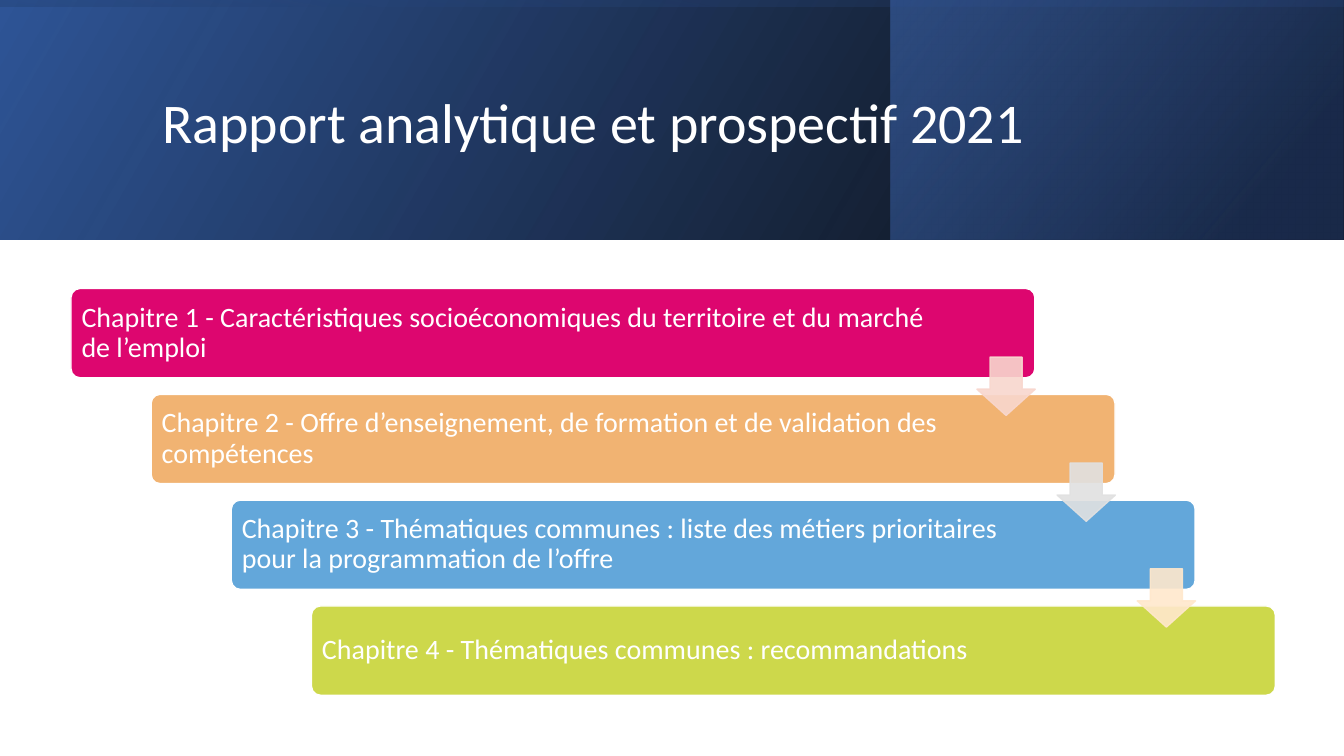
from lxml import etree
from pptx import Presentation, util as u
from pptx.dml.color import RGBColor
from pptx.enum import shapes, text
from pptx.oxml import ns

FONT = "Calibri"
COLOURS = {
    "white": "FFFFFF", "black": "000000", "navy": "203864",
    "blue": "2F5597", "bright": "4472C4",
    "pink": "DD066F", "orange": "F1B372", "sky": "63A7DA", "lime": "CDD84B",
    "pale pink": "F8D7CE", "pale grey": "E1E1E1", "pale orange": "FFE8CC",
}
# Wording, colour and right text margin (cm)
CHAPTERS = [
    ("Chapitre 1 - Caractéristiques socioéconomiques du territoire et du marché de l’emploi",
     "pink", 2.68),
    ("Chapitre 2 - Offre d’enseignement, de formation et de validation des compétences",
     "orange", 3.7),
    ("Chapitre 3 - Thématiques communes : liste des métiers prioritaires "
     "pour la programmation de l’offre", "sky", 3.7),
    ("Chapitre 4 - Thématiques communes : recommandations", "lime", 3.7),
]
ARROW_COLOURS = ["pale pink", "pale grey", "pale orange"]


def colour(name):
    return RGBColor.from_string(COLOURS[name])


def add_alpha(colour_element, percent):
    etree.SubElement(colour_element, ns.qn("a:alpha"), val=str(percent * 1000))


def add_block(page, kind, left, top, width, height):
    block = page.shapes.add_shape(kind, u.Cm(left), u.Cm(top), u.Cm(width), u.Cm(height))
    block.shadow.inherit = False
    return block


def paint(block, fill, line):
    block.fill.solid()
    block.fill.fore_color.rgb = colour(fill)
    block.line.color.rgb = colour(line)
    block.line.width = u.Pt(1)


def format_text(frame, size):
    frame.word_wrap = True
    frame.vertical_anchor = text.MSO_ANCHOR.MIDDLE
    para = frame.paragraphs[0]
    para.alignment = text.PP_ALIGN.LEFT
    para.line_spacing = 0.9
    font = para.runs[0].font
    font.name, font.size = FONT, u.Pt(size)
    font.color.rgb = colour("white")


def add_gradient(page, box, angle, stops, rotation=0):
    """Mirrored rectangle whose stops are (position, colour, opacity)."""
    block = add_block(page, shapes.MSO_SHAPE.RECTANGLE, *box)
    block.rotation = rotation
    block.line.fill.background()
    block.fill.background()
    properties = block._element.spPr
    properties.find(ns.qn("a:xfrm")).set("flipH", "1")
    gradient = etree.Element(ns.qn("a:gradFill"), rotWithShape="1")
    stop_list = etree.SubElement(gradient, ns.qn("a:gsLst"))
    for position, name, opacity in stops:
        stop = etree.SubElement(stop_list, ns.qn("a:gs"), pos=str(position * 1000))
        add_alpha(etree.SubElement(stop, ns.qn("a:srgbClr"), val=COLOURS[name]), opacity)
    etree.SubElement(gradient, ns.qn("a:lin"), ang=str(angle * 60000), scaled="0")
    properties.replace(properties.find(ns.qn("a:noFill")), gradient)


def draw_header(page, left, top, width, height):
    # Layered gradients
    add_gradient(page, (left, top, width, height), 330,
                 [(0, "black", 96), (100, "blue", 100)])
    panel_left = 22.44
    add_gradient(page, (left + panel_left, top, width - panel_left - 0.02, height), 320,
                 [(19, "navy", 68), (100, "bright", 48)])
    shift = (width - height) / 2
    add_gradient(page, (left + shift, top - shift, height, width), 350,
                 [(23, "blue", 16), (99, "black", 45)], rotation=270)

    # Title, brought in front of the gradients
    title = page.shapes.title
    title.left, title.top = u.Cm(left + 3.84), u.Cm(top + 0.97)
    title.width, title.height = u.Cm(27), u.Cm(4.37)
    title.text_frame.text = "Rapport analytique et prospectif 2021"
    format_text(title.text_frame, 40)
    page.shapes._spTree.append(title._element)


def draw_staircase(page, left, top, width, height):
    bar_width, bar_height = 24.29, 2.25
    step_x = (width - bar_width) / (len(CHAPTERS) - 1)
    step_y = (height - bar_height) / (len(CHAPTERS) - 1)

    # Chapter bars
    for i, (wording, fill, margin) in enumerate(CHAPTERS):
        bar = add_block(page, shapes.MSO_SHAPE.ROUNDED_RECTANGLE,
                        left + i * step_x, top + i * step_y, bar_width, bar_height)
        bar.adjustments[0] = 0.1
        paint(bar, fill, "white")
        frame = bar.text_frame
        frame.text = wording
        format_text(frame, 20)
        frame.margin_left = frame.margin_top = frame.margin_bottom = u.Cm(0.2)
        frame.margin_right = u.Cm(margin)

    # Arrows from each bar to the next
    for i, name in enumerate(ARROW_COLOURS):
        arrow = add_block(page, shapes.MSO_SHAPE.DOWN_ARROW,
                          left + 22.83 + i * step_x, top + 1.73 + i * step_y, 1.47, 1.47)
        arrow.adjustments[0], arrow.adjustments[1] = 0.55, 0.45
        paint(arrow, name, name)
        for element in arrow._element.spPr.iter(ns.qn("a:srgbClr")):
            add_alpha(element, 90)


def main():
    deck = Presentation()
    deck.slide_width, deck.slide_height = u.Cm(33.87), u.Cm(19.05)
    page = deck.slides.add_slide(deck.slide_layouts[5])
    draw_header(page, 0, 0, 33.87, 6.03)
    draw_staircase(page, 1.79, 7.27, 30.35, 10.25)
    deck.save("out.pptx")


if __name__ == "__main__":
    main()
